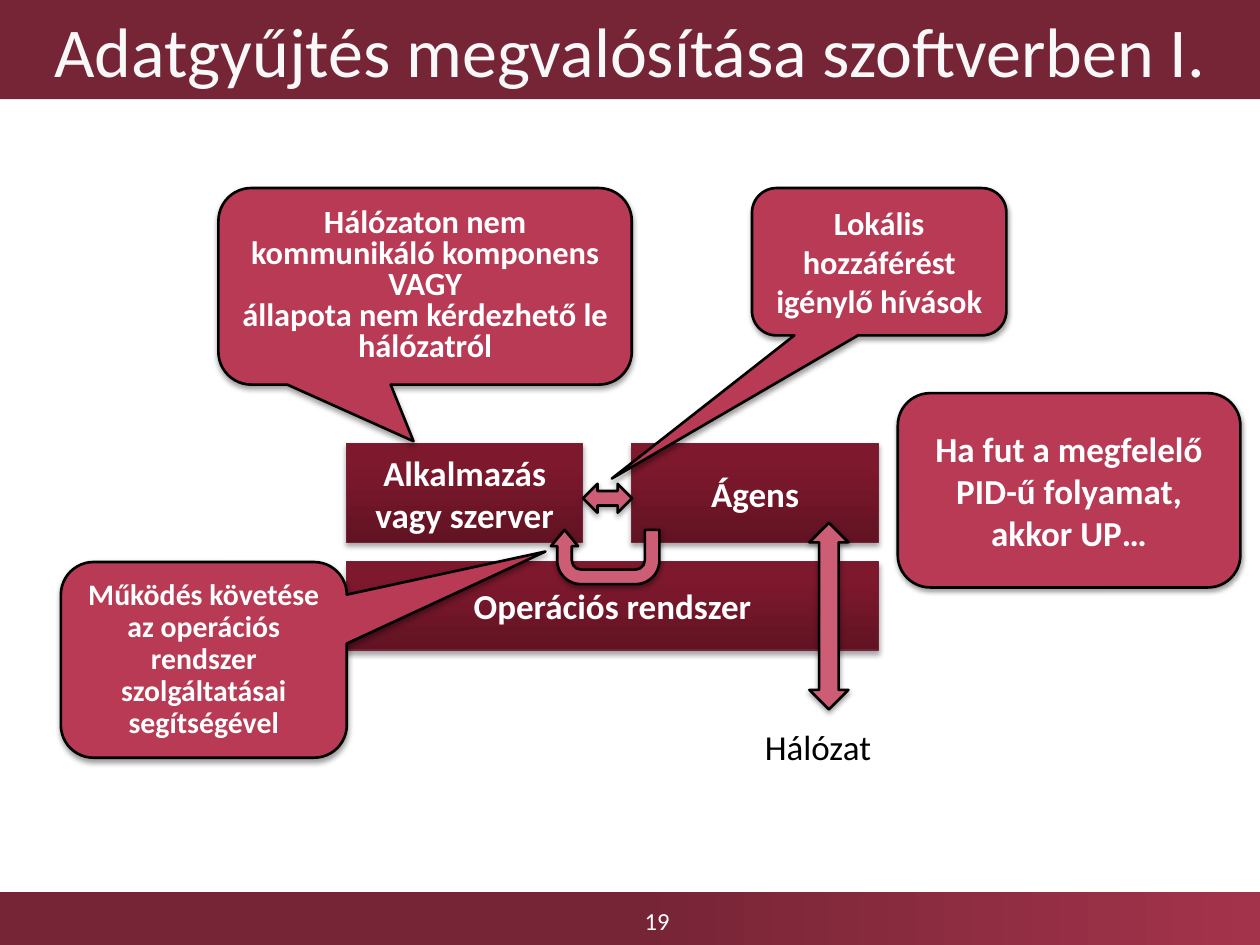
"""Builds the slide on collecting data in software."""
from lxml import etree
from pptx import Presentation
from pptx import util as u
from pptx.dml import color
from pptx.enum import shapes, text
from pptx.oxml import ns

KIND = shapes.MSO_SHAPE
BAND = "762536"
BLOCK_STOPS = [(0, "611323"), (80, "7E182D"), (100, "81162D")]
FOOTER_STOPS = [(0, BAND), (50, BAND), (100, "A3334B")]
BLOCK = dict(fill=BLOCK_STOPS, angle=270, line=("752234", 0.75), shadow=(35, 1.8))
BUBBLE = dict(fill="B83A55", line=("000000", 1.5), shadow=(38, 1.6))
ARROW = {**BUBBLE, "fill": "CC5D74"}


def rgb(value):
    """Turn a hex string into a colour."""
    return color.RGBColor.from_string(value)


def add_node(parent, tag, **attributes):
    """Append a DrawingML element to a parent."""
    node = etree.SubElement(parent, ns.qn("a:" + tag))
    for name, value in attributes.items():
        node.set(name, str(value))
    return node


def paint(shape, fill, angle):
    """Fill a shape with one colour or with gradient stops."""
    if isinstance(fill, str):
        shape.fill.solid()
        shape.fill.fore_color.rgb = rgb(fill)
        return
    shape.fill.gradient()
    shape.fill.gradient_angle = (360 - angle) % 360
    stops = shape.element.spPr.find(".//" + ns.qn("a:gsLst"))
    for stop in list(stops):
        stops.remove(stop)
    for position, value in fill:
        add_node(add_node(stops, "gs", pos=position * 1000), "srgbClr", val=value)


def cast_shadow(shape, opacity, distance):
    """Give a shape a soft shadow below it."""
    effects = shape.element.spPr.find(ns.qn("a:effectLst"))
    outer = add_node(effects, "outerShdw", blurRad=u.Pt(3.1), dist=u.Pt(distance),
                     dir=5400000, rotWithShape=0)
    add_node(add_node(outer, "srgbClr", val="000000"), "alpha", val=opacity * 1000)


def add_figure(page, kind, place, fill, angle=0, line=None, shadow=None, adjust=()):
    """Add a preset shape with its fill, outline and shadow."""
    shape = page.shapes.add_shape(kind, *map(u.Pt, place))
    for index, value in enumerate(adjust):
        shape.adjustments[index] = value
    paint(shape, fill, angle)
    if line:
        shape.line.color.rgb = rgb(line[0])
        shape.line.width = u.Pt(line[1])
    else:
        shape.line.fill.background()
    shape.shadow.inherit = False
    if shadow:
        cast_shadow(shape, *shadow)
    return shape


def write(shape, lines, size, value="FFFFFF", bold=True, spacing=None,
          align=text.PP_ALIGN.CENTER, anchor=text.MSO_ANCHOR.MIDDLE, wrap=True):
    """Write paragraphs of one format into a shape."""
    box = shape.text_frame
    box.word_wrap = wrap
    box.vertical_anchor = anchor
    for index, words in enumerate(lines):
        para = box.add_paragraph() if index else box.paragraphs[0]
        para.alignment = align
        if spacing:
            para.line_spacing = spacing
        span = para.add_run()
        span.text = words
        for name, setting in dict(name="Calibri", size=u.Pt(size), bold=bold).items():
            setattr(span.font, name, setting)
        span.font.color.rgb = rgb(value)


def add_label(page, place, words, size, **format_values):
    """Add a plain text box."""
    box = page.shapes.add_textbox(*map(u.Pt, place))
    write(box, [words], size, bold=False, **format_values)


def add_block(page, place, words):
    """Add a dark component block."""
    write(add_figure(page, KIND.RECTANGLE, place, **BLOCK), [words], 20)


def add_bubble(page, place, lines, size, tail=None, spacing=None):
    """Add a rounded note, with a tail when one is given."""
    kind = KIND.ROUNDED_RECTANGULAR_CALLOUT if tail else KIND.ROUNDED_RECTANGLE
    adjust = (*tail, 0.167) if tail else ()
    shape = add_figure(page, kind, place, adjust=adjust, **BUBBLE)
    write(shape, lines, size, spacing=spacing)


def add_frame(page):
    """Add the title band, the footer band and the page number."""
    add_figure(page, KIND.RECTANGLE, (0, 509.8, 720, 30.2), FOOTER_STOPS)
    add_label(page, (258.5, 512, 234, 28), "19", 14)
    title = add_figure(page, KIND.RECTANGLE, (0, 0, 720, 56.7), BAND)
    write(title, ["Adatgyűjtés megvalósítása szoftverben I."], 40, "F8F8F8", bold=False)


def main():
    """Build and save the slide."""
    deck = Presentation()
    deck.slide_width, deck.slide_height = u.Pt(720), u.Pt(540)
    page = deck.slides.add_slide(deck.slide_layouts[6])
    add_frame(page)
    add_block(page, (198, 321, 304, 50.5), "Operációs rendszer")
    add_block(page, (198, 253.5, 135, 56.5), "Alkalmazás vagy szerver")
    add_block(page, (361, 253.5, 141, 56.5), "Ágens")
    add_bubble(page, (124.8, 107.5, 236.2, 112.3),
               ["Hálózaton nem kommunikáló komponens", "VAGY",
                "állapota nem kérdezhető le hálózatról"],
               18.5, (-0.028, 0.788), 0.8)
    add_figure(page, KIND.LEFT_RIGHT_ARROW, (333.2, 276.5, 28, 16.5), **ARROW)
    add_figure(page, KIND.UP_DOWN_ARROW, (462.5, 298.8, 22.3, 106.6), **ARROW)
    add_label(page, (430, 411, 80, 34), "Hálózat", 20, value="000000",
              align=text.PP_ALIGN.LEFT, anchor=text.MSO_ANCHOR.TOP)
    add_bubble(page, (429.7, 107.5, 145.4, 84.2),
               ["Lokális hozzáférést igénylő hívások"], 18.5, (-1.051, 1.472))
    turn = add_figure(page, KIND.U_TURN_ARROW, (314.8, 302.8, 62, 31),
                      adjust=(0.269, 0.25, 0.299, 0.438, 1), **ARROW)
    turn.rotation = 180
    add_bubble(page, (34.8, 321.2, 163.4, 111.8),
               ["Működés követése az operációs rendszer szolgáltatásai segítségével"],
               17, (1.195, -0.554), 0.9)
    add_bubble(page, (513, 224.7, 195.8, 111),
               ["Ha fut a megfelelő PID-ű folyamat, akkor UP…"], 20)
    deck.save("out.pptx")


if __name__ == "__main__":
    main()
